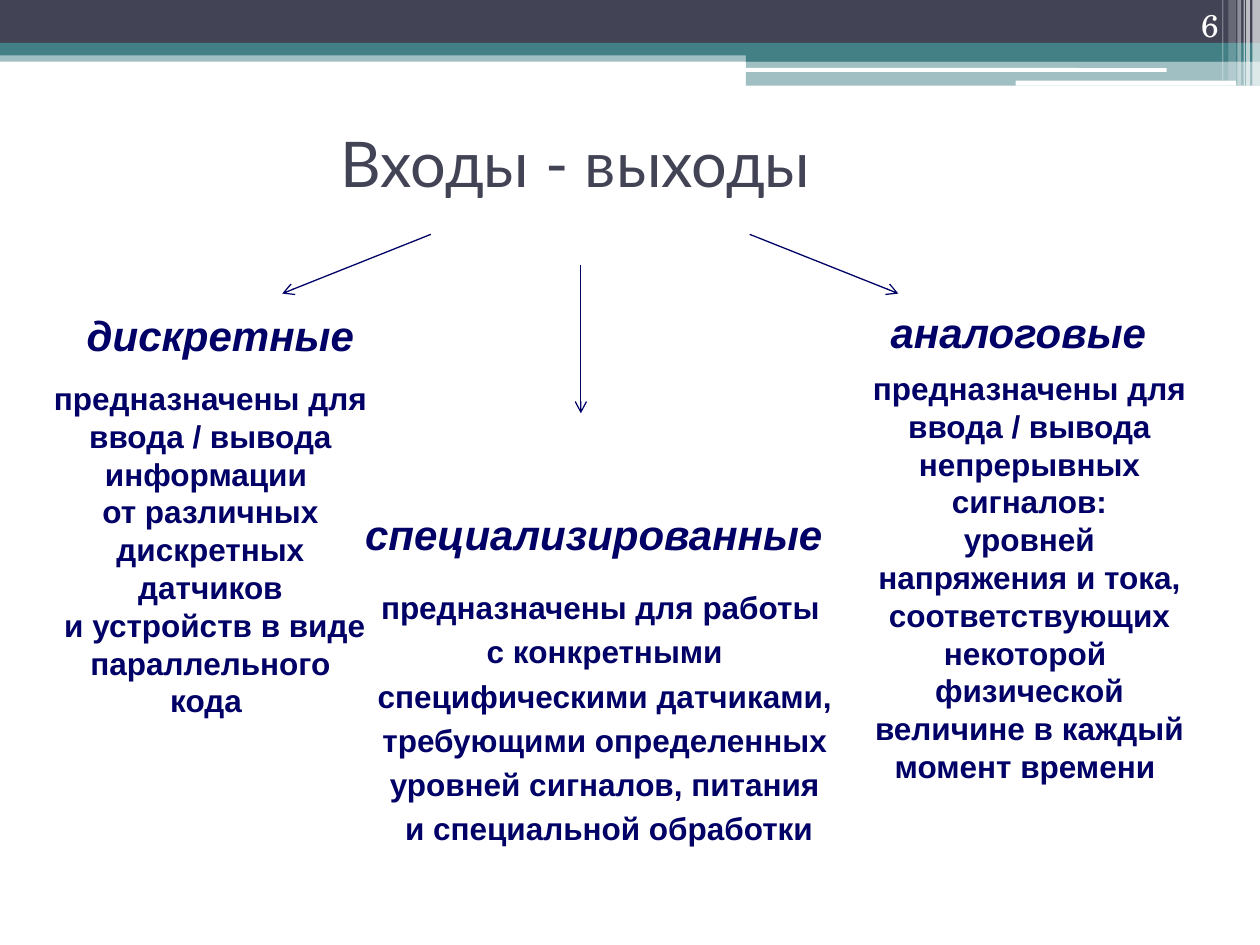
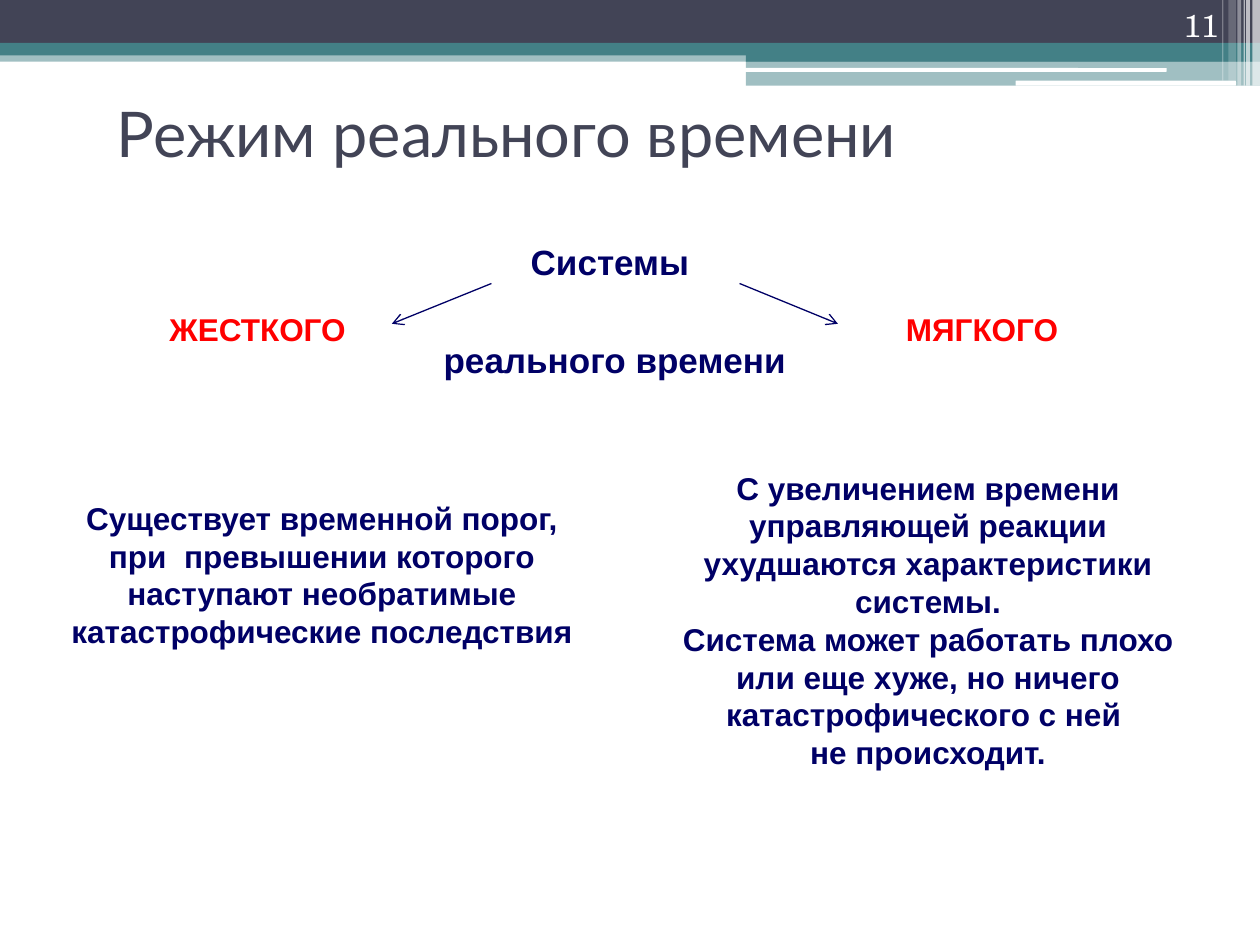
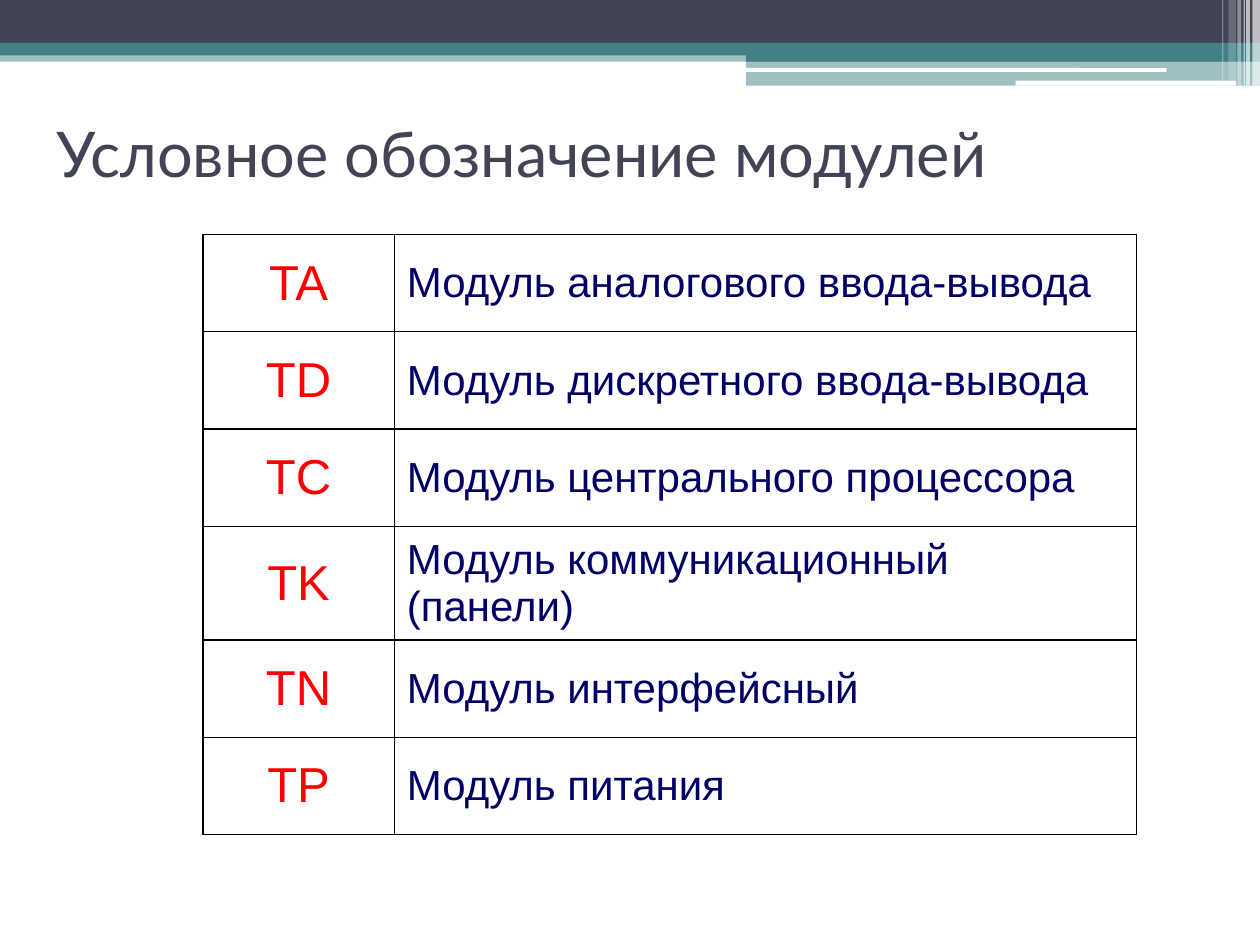
from lxml.etree import SubElement as Sub
from pptx import Presentation
from pptx.dml.color import RGBColor
from pptx.enum.shapes import MSO_CONNECTOR as Link, MSO_SHAPE as Form
from pptx.enum.text import MSO_ANCHOR as Anchor, PP_ALIGN as Align
from pptx.oxml.ns import qn
from pptx.util import Inches, Pt

# Slide size and a grid of 100 columns by 75 rows
WIDE, HIGH = Inches(10), Inches(7.5)
COL, ROW = WIDE / 100, HIGH / 75

SLATE = RGBColor(0x42, 0x44, 0x56)
TEAL = RGBColor(0x43, 0x80, 0x86)
NAVY = RGBColor(0x00, 0x00, 0x66)
RED = RGBColor(0xFF, 0x00, 0x00)
WHITE = RGBColor(0xFF, 0xFF, 0xFF)

BODY, HEAD, COUNT = "Arial", "Lato", "TeX Gyre Schola"

# Header bands: column, row, columns, rows, colour, opacity in percent
BANDS = [
    (0, 4, 100, 0.9, TEAL, 50),
    (0, 0, 100, 3.4, SLATE, 100),
    (0, 3.4, 100, 1, TEAL, 100),
    (59.2, 3.9, 40.8, 1, TEAL, 100),
    (59.2, 4.8, 40.8, 2, TEAL, 50),
]
# Rounded white strips under the header
STRIPS = [(59.1, 5.4, 33.5, 0.3), (80.6, 6.4, 17.5, 0.4)]
# Upright stripes at the right edge: column, columns, rows, opacity
STRIPES = [
    (99.4, 0.6, 6.8, 65),
    (98.9, 0.3, 6.8, 65),
    (98.7, 0.1, 6.8, 60),
    (98.2, 0.3, 6.8, 40),
    (97.5, 0.6, 6.4, 20),
    (97, 0.1, 6.4, 30),
]

MODULES = [
    ("TA", "Модуль аналогового ввода-вывода"),
    ("TD", "Модуль дискретного ввода-вывода"),
    ("TC", "Модуль центрального процессора"),
    ("TK", "Модуль коммуникационный (панели)"),
    ("TN", "Модуль интерфейсный"),
    ("TP", "Модуль питания"),
]


def grid(x, y, w, h):
    return round(x * COL), round(y * ROW), round(w * COL), round(h * ROW)


def style(para, size, color, font=BODY, bold=False, slant=False, align=Align.LEFT):
    para.alignment = align
    for run in para.runs:
        face = run.font
        face.name, face.size = font, Pt(size)
        face.bold, face.italic = bold, slant
        face.color.rgb = color


def block(slide, area, color, alpha=100, form=Form.RECTANGLE):
    shape = slide.shapes.add_shape(form, *grid(*area))
    shape.shadow.inherit = False
    shape.line.fill.background()
    shape.fill.solid()
    shape.fill.fore_color.rgb = color
    if alpha < 100:
        tint = shape.fill._xPr.find(".//" + qn("a:srgbClr"))
        Sub(tint, qn("a:alpha")).set("val", str(alpha * 1000))


def write(slide, area, lines, size, color=NAVY, gap=0, anchor=Anchor.TOP, **look):
    """Put one paragraph per line; gap is the space between them in points."""
    frame = slide.shapes.add_textbox(*grid(*area)).text_frame
    frame.word_wrap = True
    frame.vertical_anchor = anchor
    frame.text = "\n".join(lines)
    for i, para in enumerate(frame.paragraphs):
        style(para, size, color, **look)
        if i and gap:
            para.space_before = Pt(gap)


def body(slide, area, lines, size=18, **look):
    write(slide, area, lines, size, bold=True, align=Align.CENTER, **look)


def kind(slide, area, name):
    write(slide, area, [name], 24, bold=True, slant=True)


def arrow(slide, x1, y1, x2, y2):
    ends = [round(v) for v in (x1 * COL, y1 * ROW, x2 * COL, y2 * ROW)]
    link = slide.shapes.add_connector(Link.STRAIGHT, *ends)
    link.line.color.rgb = NAVY
    link.line.width = Pt(0.75)
    Sub(link.line._get_or_add_ln(), qn("a:tailEnd")).set("type", "arrow")
    Sub(link._element.spPr, qn("a:effectLst"))


def start(deck, title, area, align=Align.LEFT, number=None):
    """Add a slide with the shared header, its title and its number."""
    slide = deck.slides.add_slide(deck.slide_layouts[6])
    for *spot, color, alpha in BANDS:
        block(slide, spot, color, alpha)
    for spot in STRIPS:
        block(slide, spot, WHITE, form=Form.ROUNDED_RECTANGLE)
    for x, w, h, alpha in STRIPES:
        block(slide, (x, 0, w, h), WHITE, alpha)
    write(slide, area, [title], 36, SLATE, font=HEAD, align=align)
    if number:
        write(slide, (89.4, 0, 8.3, 4), [number], 18, WHITE,
              anchor=Anchor.BOTTOM, font=COUNT, align=Align.RIGHT)
    return slide


def frame_cell(cell):
    props = cell._tc.get_or_add_tcPr()
    for side in ("lnL", "lnR", "lnT", "lnB"):
        edge = Sub(props, qn("a:" + side), w=str(Pt(1)))
        fill = Sub(edge, qn("a:solidFill"))
        Sub(fill, qn("a:srgbClr")).set("val", "000000")
    cell.fill.background()
    cell.vertical_anchor = Anchor.MIDDLE


def chart_rows(slide, x, y, widths, step, rows):
    area = grid(x, y, sum(widths), step * len(rows))
    table = slide.shapes.add_table(len(rows), len(widths), *area).table
    table.first_row = table.horz_banding = False
    for column, width in zip(table.columns, widths):
        column.width = round(width * COL)
    looks = [(28, RED, Align.CENTER), (24, NAVY, Align.LEFT)]
    for r, row in enumerate(rows):
        table.rows[r].height = round(step * ROW)
        for c, (size, color, align) in enumerate(looks):
            cell = table.cell(r, c)
            cell.text_frame.text = row[c]
            style(cell.text_frame.paragraphs[0], size, color, align=align)
            frame_cell(cell)


def ports(deck):
    slide = start(deck, "Входы - выходы", (8.3, 9.4, 74.8, 7.1), Align.CENTER, "6")
    kind(slide, (69.7, 23.8, 22.8, 5), "аналоговые")
    kind(slide, (5.9, 24.1, 24.4, 5), "дискретные")
    kind(slide, (28, 39.9, 38.6, 5), "специализированные")
    body(slide, (28.7, 46.2, 38.6, 22.1), [
        "предназначены для работы ",
        "с конкретными",
        "специфическими датчиками, ",
        "требующими определенных",
        "уровней сигналов, питания",
        " и специальной обработки",
    ], gap=3.6)
    body(slide, (68.1, 28.8, 27.2, 34), [
        "предназначены для ввода / вывода непрерывных сигналов:",
        "уровней напряжения и тока, соответствующих некоторой ",
        "физической величине в каждый момент времени ",
    ])
    body(slide, (3.1, 29.6, 27.2, 28), [
        "предназначены для ввода / вывода информации ",
        "от различных дискретных датчиков",
        " и устройств в виде параллельного кода ",
    ])
    arrow(slide, 46.1, 21, 46.1, 32.8)
    arrow(slide, 34.2, 18.6, 22.4, 23.3)
    arrow(slide, 59.5, 18.6, 71.3, 23.3)


def timing(deck):
    slide = start(deck, "Режим реального времени", (8.3, 7, 74.8, 7.1), number="11")
    body(slide, (4.3, 39.1, 42.5, 13), [
        "Существует временной порог, при  превышении которого "
        "наступают необратимые катастрофические последствия",
    ])
    body(slide, (52.4, 36.7, 42.5, 25), [
        "С увеличением времени управляющей реакции "
        "ухудшаются характеристики системы.",
        "Система может работать плохо или еще хуже, "
        "но ничего катастрофического с ней ",
        "не происходит.",
    ])
    body(slide, (29.5, 18.6, 38.6, 12.3), ["Системы ", "реального времени"], 20, gap=32)
    for x, name in ((9.8, "ЖЕСТКОГО"), (67.3, "МЯГКОГО")):
        body(slide, (x, 24.1, 21.3, 4), [name], color=RED)
    arrow(slide, 39, 22.5, 31.1, 25.7)
    arrow(slide, 58.7, 22.5, 66.5, 25.7)


def codes(deck):
    slide = start(deck, "Условное обозначение модулей", (3.5, 8.6, 91.7, 7.1))
    chart_rows(slide, 16.1, 18.6, (15.2, 58.9), 7.73, MODULES)


def main():
    deck = Presentation()
    deck.slide_width, deck.slide_height = WIDE, HIGH
    ports(deck)
    timing(deck)
    codes(deck)
    deck.save("out.pptx")


if __name__ == "__main__":
    main()
